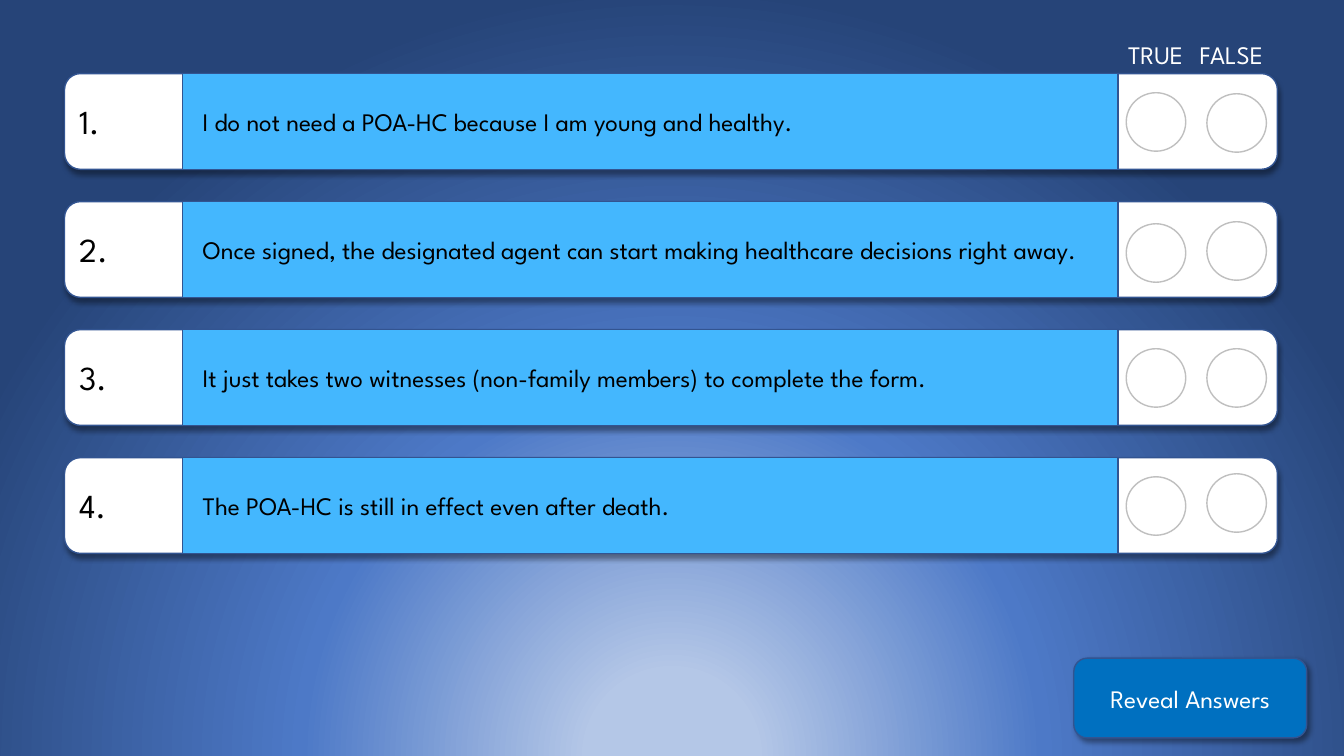
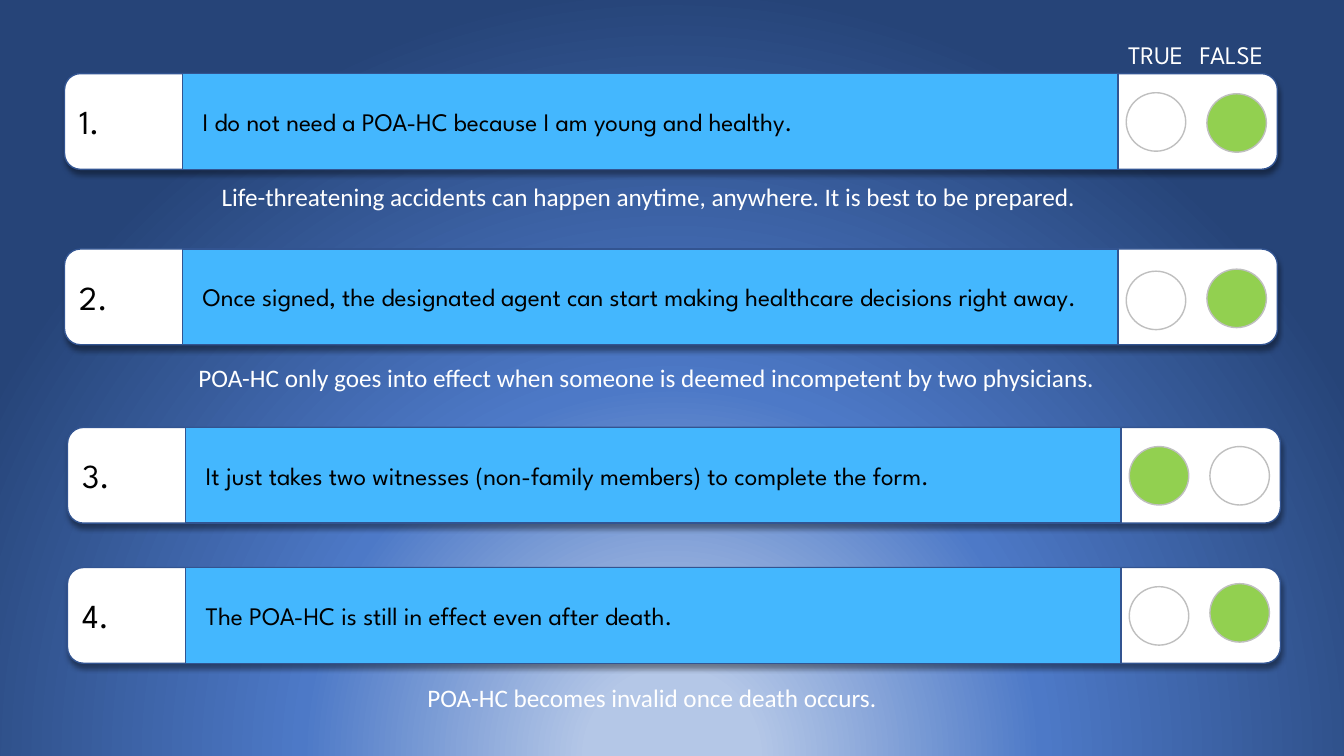
import dataclasses

import lxml.etree
import pptx
import pptx.dml.color
import pptx.enum.shapes
import pptx.enum.text
import pptx.oxml
import pptx.oxml.ns
import pptx.util

Inches = pptx.util.Inches
MSO_SHAPE = pptx.enum.shapes.MSO_SHAPE
PP_ALIGN = pptx.enum.text.PP_ALIGN


@dataclasses.dataclass(frozen=True)
class Theme:
    white: str = "FFFFFF"
    ink: str = "000000"
    outline: str = "325491"
    ring: str = "BFBFBF"
    statement: str = "44B7FE"
    button: str = "0070C0"
    correct: str = "92D050"
    glow: tuple = ((11, "B4C7E7"), (48, "4D79C7"), (100, "264478"))
    font: str = "League Spartan"
    note_font: str = "Calibri"
    number_size: int = 24
    text_size: int = 18


@dataclasses.dataclass(frozen=True)
class Question:
    text: str
    answer: bool
    true_dy: float  # circle tops, measured from the top of the row
    false_dy: float


THEME = Theme()
ROW_W, ROW_H = 12.03, 0.95
QUESTIONS = (
    Question("I do not need a POA-HC because I am young and healthy.", False, 0.19, 0.2),
    Question("Once signed, the designated agent can start making healthcare "
             "decisions right away.", False, 0.22, 0.2),
    Question("It just takes two witnesses (non-family members) to complete the form.",
             True, 0.19, 0.19),
    Question("The POA-HC is still in effect even after death.", False, 0.19, 0.16),
)
QUIZ_ROWS = [(0.64, 0.73 + 1.27 * i) for i in range(len(QUESTIONS))]
ANSWER_ROWS = [(0.64, 0.73), (0.64, 2.47), (0.67, 4.24), (0.67, 5.63)]
NOTES = (
    ((2.1, 1.75, 8.77, 0.4),
     "Life-threatening accidents can happen anytime, anywhere. It is best to be prepared."),
    ((1.87, 3.55, 9.63, 0.4),
     "POA-HC only goes into effect when someone is deemed incompetent by two physicians."),
    ((4.14, 6.72, 6.73, 0.4), "POA-HC becomes invalid once death occurs."),
)


def rgb(value):
    return pptx.dml.color.RGBColor.from_string(value)


def set_background(master):
    """Give every slide a glow that rises from below the bottom edge."""
    fill = master.background.fill
    fill.solid()
    stops = "".join(f'<a:gs pos="{pos * 1000}"><a:srgbClr val="{color}"/></a:gs>'
                    for pos, color in THEME.glow)
    gradient = pptx.oxml.parse_xml(
        f'<a:gradFill rotWithShape="1" {pptx.oxml.ns.nsdecls("a")}>'
        f'<a:gsLst>{stops}</a:gsLst><a:path path="circle">'
        '<a:fillToRect l="50000" t="130000" r="50000" b="-30000"/>'
        '</a:path></a:gradFill>')
    solid = master.element.find(".//" + pptx.oxml.ns.qn("p:bgPr"))[0]
    solid.getparent().replace(solid, gradient)


def set_shadow(sp, angle):
    qn = pptx.oxml.ns.qn
    effects = sp.element.spPr.find(qn("a:effectLst"))
    shadow = lxml.etree.SubElement(
        effects, qn("a:outerShdw"), blurRad=str(pptx.util.Pt(4)),
        dist=str(pptx.util.Pt(3)), dir=str(angle * 60000), rotWithShape="0")
    color = lxml.etree.SubElement(shadow, qn("a:srgbClr"), val=THEME.ink)
    lxml.etree.SubElement(color, qn("a:alpha"), val="40000")


def write(sp, text, color, size=THEME.text_size, font=THEME.font, align=PP_ALIGN.LEFT):
    tf = sp.text_frame
    tf.word_wrap = True
    p = tf.paragraphs[0]
    p.text = text
    p.alignment = align
    p.font.name = font
    p.font.size = pptx.util.Pt(size)
    p.font.color.rgb = rgb(color)


def add_shape(s, kind, box, fill, line=THEME.outline, shadow_angle=None):
    sp = s.shapes.add_shape(kind, *map(Inches, box))
    sp.shadow.inherit = False
    sp.fill.solid()
    sp.fill.fore_color.rgb = rgb(fill)
    sp.line.color.rgb = rgb(line)
    sp.line.width = pptx.util.Pt(1)
    sp.text_frame.vertical_anchor = pptx.enum.text.MSO_ANCHOR.MIDDLE
    if shadow_angle is not None:
        set_shadow(sp, shadow_angle)
    return sp


def add_label(s, box, text, font=THEME.font):
    write(s.shapes.add_textbox(*map(Inches, box)), text, THEME.white, font=font)


def add_row(s, left, top, number, question, reveal):
    card = add_shape(s, MSO_SHAPE.ROUNDED_RECTANGLE, (left, top, ROW_W, ROW_H),
                     THEME.white, shadow_angle=90)
    write(card, f"{number}.", THEME.ink, THEME.number_size)
    statement = add_shape(s, MSO_SHAPE.RECTANGLE, (left + 1.17, top, 9.28, ROW_H),
                          THEME.statement)
    statement.text_frame.margin_left = Inches(0.2)
    write(statement, question.text, THEME.ink)
    for value, dx, dy in ((True, 10.53, question.true_dy),
                          (False, 11.33, question.false_dy)):
        fill = THEME.correct if reveal and value == question.answer else THEME.white
        add_shape(s, MSO_SHAPE.OVAL, (left + dx, top + dy, 0.59, 0.58), fill, THEME.ring)


def add_quiz_slide(prs, rows, reveal):
    s = prs.slides.add_slide(prs.slide_layouts[6])
    add_label(s, (11.09, 0.34, 0.82, 0.4), "TRUE")
    add_label(s, (11.8, 0.34, 0.93, 0.4), "FALSE")
    for number, ((left, top), question) in enumerate(zip(rows, QUESTIONS), 1):
        add_row(s, left, top, number, question, reveal)
    return s


def add_reveal_button(s, box):
    button = add_shape(s, MSO_SHAPE.ROUNDED_RECTANGLE, box, THEME.button, shadow_angle=45)
    write(button, "Reveal Answers", THEME.white, align=PP_ALIGN.CENTER)


def main():
    prs = pptx.Presentation()
    prs.slide_width, prs.slide_height = Inches(13.33), Inches(7.5)
    set_background(prs.slide_master)

    quiz = add_quiz_slide(prs, QUIZ_ROWS, reveal=False)
    add_reveal_button(quiz, (10.65, 6.53, 2.31, 0.79))

    answers = add_quiz_slide(prs, ANSWER_ROWS, reveal=True)
    for box, text in NOTES:
        add_label(answers, box, text, THEME.note_font)

    prs.save("out.pptx")


if __name__ == "__main__":
    main()
